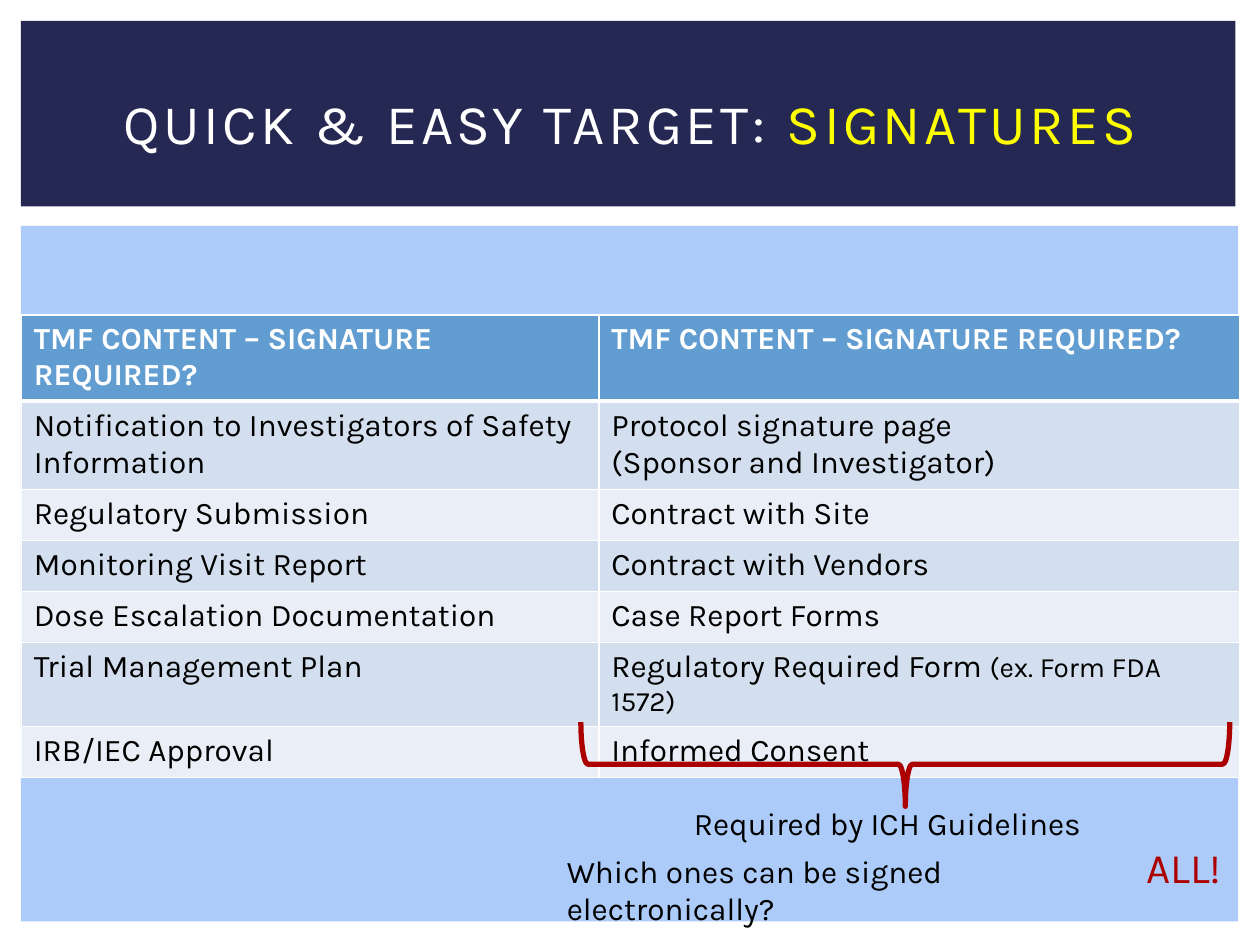
from dataclasses import dataclass
from lxml import etree
from pptx import Presentation
from pptx.dml.color import RGBColor
from pptx.enum.shapes import MSO_SHAPE
from pptx.enum.text import MSO_ANCHOR, PP_ALIGN
from pptx.oxml.ns import qn
from pptx.util import Pt

RECTANGLE, BRACE = MSO_SHAPE.RECTANGLE, MSO_SHAPE.RIGHT_BRACE
TOP, MIDDLE = MSO_ANCHOR.TOP, MSO_ANCHOR.MIDDLE
LEFT, CENTER = PP_ALIGN.LEFT, PP_ALIGN.CENTER

FONT = "Karla"
WHITE, BLACK, YELLOW, RED = "FFFFFF", "000000", "FFFF00", "AC0000"
NAVY, SKY, HEADER_BLUE = "242852", "ACCBF9", "629DD1"
BAND_FILLS = ("D3DFEE", "EAEFF7")
COLUMN_WIDTHS = (330, 366)
ROW_HEIGHT = 29.2


@dataclass
class Frame:
    left: float
    top: float
    width: float
    height: float

    def lengths(self) -> tuple:
        return Pt(self.left), Pt(self.top), Pt(self.width), Pt(self.height)


@dataclass
class Span:
    text: str
    size: float = 18
    color: str = BLACK
    bold: bool = False
    spacing: float = 0


@dataclass
class Label:
    frame: Frame
    spans: list[Span]
    align: PP_ALIGN = LEFT
    anchor: MSO_ANCHOR = TOP


PANELS = [
    (Frame(12, 129, 695.5, 397.5), SKY),
    (Frame(12, 12, 694, 106), NAVY),
]
TITLE = Label(
    Frame(30, 28, 660, 83),
    [Span("QUICK & EASY TARGET: ", 32, WHITE, spacing=2),
     Span("SIGNATURES", 32, YELLOW, spacing=2)],
    CENTER, MIDDLE,
)
NOTES = [
    Label(Frame(389.5, 455.8, 294, 30), [Span("Required by ICH Guidelines")]),
    Label(Frame(316.8, 483.1, 342.7, 29), [Span("Which ones can be signed electronically?")]),
    Label(Frame(648, 477.4, 60.5, 36), [Span("ALL!", 24, RED)]),
]
HEADERS = ("TMF CONTENT – SIGNATURE REQUIRED?",) * 2
# Each cell is a list of paragraphs, each paragraph a list of spans.
BODY = [
    ([[Span("Notification to Investigators of Safety Information")]],
     [[Span("Protocol signature page")], [Span("(Sponsor and Investigator)")]]),
    ([[Span("Regulatory Submission")]], [[Span("Contract with Site")]]),
    ([[Span("Monitoring Visit Report")]], [[Span("Contract with Vendors")]]),
    ([[Span("Dose Escalation Documentation")]], [[Span("Case Report Forms")]]),
    ([[Span("Trial Management Plan")]],
     [[Span("Regulatory Required Form "), Span("(ex. Form FDA 1572)", 16)]]),
    ([[Span("IRB/IEC Approval")]], [[Span("Informed Consent")]]),
]


def rgb(value: str) -> RGBColor:
    return RGBColor.from_string(value)


def write_paragraph(paragraph, spans: list[Span], align: PP_ALIGN = LEFT) -> None:
    paragraph.alignment = align
    for span in spans:
        run = paragraph.add_run()
        run.text = span.text
        formats = {"name": FONT, "size": Pt(span.size), "bold": span.bold}
        for name, value in formats.items():
            setattr(run.font, name, value)
        run.font.color.rgb = rgb(span.color)
        if span.spacing:
            run.font._element.set("spc", str(int(span.spacing * 100)))


def draw_panel(page, frame: Frame, color: str) -> None:
    panel = page.shapes.add_shape(RECTANGLE, *frame.lengths())
    panel.shadow.inherit = False
    panel.fill.solid()
    panel.fill.fore_color.rgb = rgb(color)
    panel.line.fill.background()


def draw_label(page, label: Label) -> None:
    box = page.shapes.add_textbox(*label.frame.lengths())
    formats = {"word_wrap": True, "vertical_anchor": label.anchor}
    for name, value in formats.items():
        setattr(box.text_frame, name, value)
    write_paragraph(box.text_frame.paragraphs[0], label.spans, label.align)


def draw_brace(page, frame: Frame) -> None:
    brace = page.shapes.add_shape(BRACE, *frame.lengths())
    brace.shadow.inherit = False
    brace.rotation = 90
    brace.fill.background()
    brace.line.color.rgb = rgb(RED)
    brace.line.width = Pt(3)


def add_borders(cell, widths: dict[str, float]) -> None:
    """Add white borders; widths go in the order L, R, T, B."""
    properties = cell._tc.get_or_add_tcPr()
    for side, width in widths.items():
        line = etree.SubElement(properties, qn(f"a:ln{side}"), w=str(Pt(width)))
        fill = etree.SubElement(line, qn("a:solidFill"))
        etree.SubElement(fill, qn("a:srgbClr"), val=WHITE)


def fill_cell(cell, paragraphs: list[list[Span]], color: str, top: float, bottom: float) -> None:
    add_borders(cell, {"L": 1, "R": 1, "T": top, "B": bottom})
    cell.fill.solid()
    cell.fill.fore_color.rgb = rgb(color)
    for index, spans in enumerate(paragraphs):
        frame = cell.text_frame
        paragraph = frame.add_paragraph() if index else frame.paragraphs[0]
        write_paragraph(paragraph, spans)


def draw_table(page, left: float, top: float) -> None:
    header = [[[Span(text, 17.5, WHITE, bold=True)]] for text in HEADERS]
    rows = [header, *BODY]
    frame = Frame(left, top, sum(COLUMN_WIDTHS), ROW_HEIGHT * len(rows))
    table = page.shapes.add_table(len(rows), len(COLUMN_WIDTHS), *frame.lengths()).table
    for column, width in zip(table.columns, COLUMN_WIDTHS):
        column.width = Pt(width)
    for row_index, row in enumerate(rows):
        table.rows[row_index].height = Pt(ROW_HEIGHT)
        color = BAND_FILLS[(row_index - 1) % 2] if row_index else HEADER_BLUE
        top_width = 3 if row_index == 1 else 1
        bottom_width = 1 if row_index else 3
        for column_index, paragraphs in enumerate(row):
            cell = table.cell(row_index, column_index)
            fill_cell(cell, paragraphs, color, top_width, bottom_width)


def main() -> None:
    deck = Presentation()
    deck.slide_width, deck.slide_height = Pt(720), Pt(540)
    page = deck.slides.add_slide(deck.slide_layouts[6])
    for frame, color in PANELS:
        draw_panel(page, frame, color)
    draw_label(page, TITLE)
    draw_table(page, 12.2, 180)
    draw_brace(page, Frame(493.2, 251.3, 48.2, 370.8))
    for note in NOTES:
        draw_label(page, note)
    deck.save("out.pptx")


if __name__ == "__main__":
    main()
